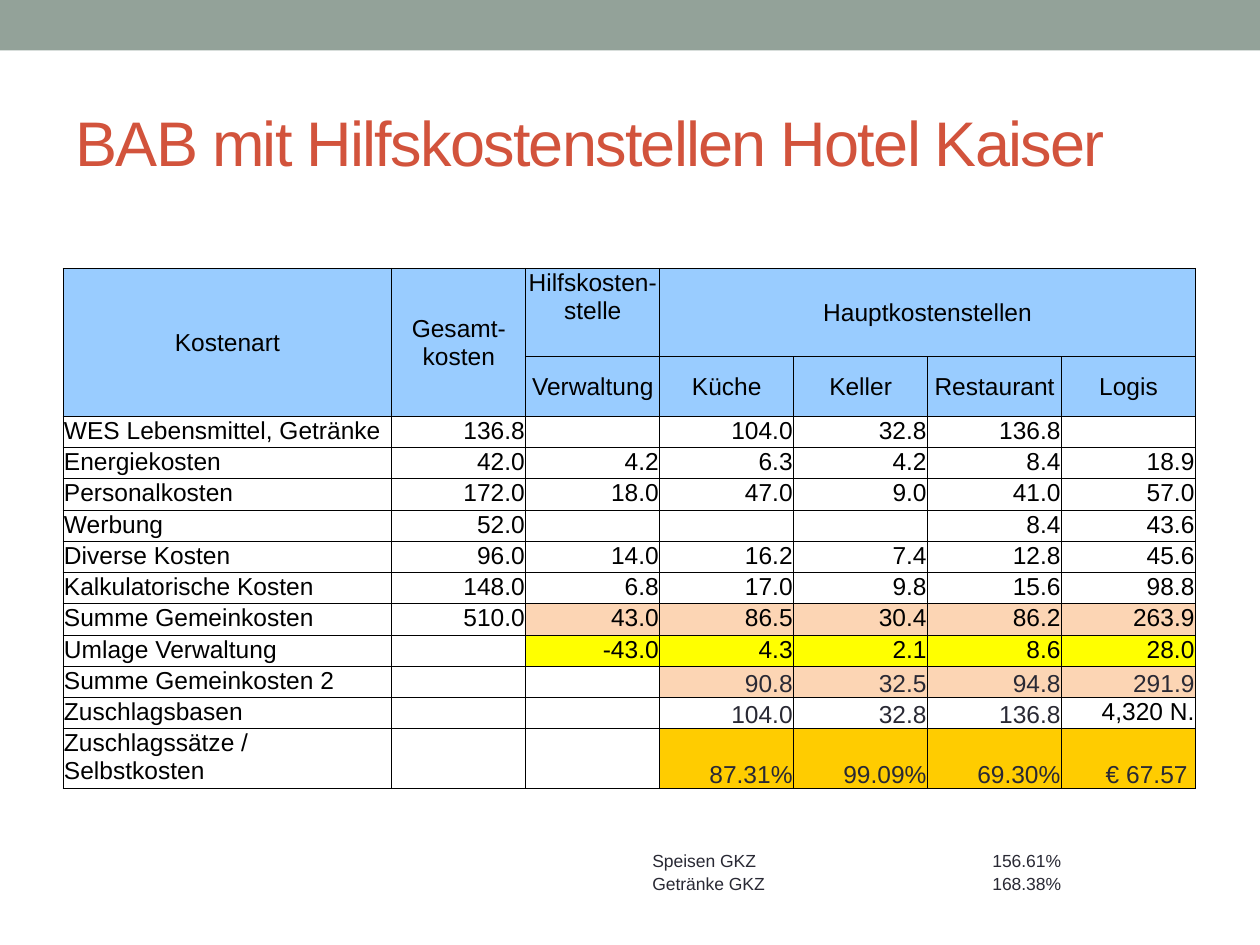
from lxml.etree import SubElement
from pptx import Presentation
from pptx.dml.color import RGBColor
from pptx.enum.shapes import MSO_SHAPE
from pptx.enum.text import MSO_ANCHOR as ANCHOR, PP_ALIGN as ALIGN
from pptx.oxml.ns import qn
from pptx.util import Cm, Pt

SAGE = RGBColor(0x93, 0xA2, 0x99)
RUST = RGBColor(0xD2, 0x53, 0x3C)
BLACK = RGBColor(0, 0, 0)
SLATE = RGBColor(0x29, 0x29, 0x34)
BLUE = RGBColor(0x99, 0xCC, 0xFF)
PEACH = RGBColor(0xFC, 0xD5, 0xB4)
YELLOW = RGBColor(0xFF, 0xFF, 0x00)
GOLD = RGBColor(0xFF, 0xCC, 0x00)
PLAIN_TABLE = "{2D5ABB26-0587-4C30-8999-92F81FD0307C}"

HEADER = [
    ["Kostenart", "Gesamt-kosten", "Hilfskosten-stelle", "Hauptkostenstellen", "", "", ""],
    ["", "", "Verwaltung", "Küche", "Keller", "Restaurant", "Logis"],
]
COSTS = [
    ["WES Lebensmittel, Getränke", "136.8", "", "104.0", "32.8", "136.8", ""],
    ["Energiekosten", "42.0", "4.2", "6.3", "4.2", "8.4", "18.9"],
    ["Personalkosten", "172.0", "18.0", "47.0", "9.0", "41.0", "57.0"],
    ["Werbung", "52.0", "", "", "", "8.4", "43.6"],
    ["Diverse Kosten", "96.0", "14.0", "16.2", "7.4", "12.8", "45.6"],
    ["Kalkulatorische Kosten", "148.0", "6.8", "17.0", "9.8", "15.6", "98.8"],
    ["Summe Gemeinkosten", "510.0", "43.0", "86.5", "30.4", "86.2", "263.9"],
    ["Umlage Verwaltung", "", "-43.0", "4.3", "2.1", "8.6", "28.0"],
    ["Summe Gemeinkosten 2", "", "", "90.8", "32.5", "94.8", "291.9"],
    ["Zuschlagsbasen", "", "", "104.0", "32.8", "136.8", "4,320 N."],
    ["Zuschlagssätze / Selbstkosten", "", "", "87.31%", "99.09%", "69.30%", " € 67.57 "],
]
SURCHARGES = [["Speisen GKZ", "", "156.61%"], ["Getränke GKZ", "", "168.38%"]]

# Row number: (first highlighted column, colour)
HIGHLIGHTS = {8: (2, PEACH), 9: (2, YELLOW), 10: (3, PEACH), 12: (3, GOLD)}


class SlideBuilder:
    font = "Arial"

    def __init__(self, slide):
        self.slide = slide

    def style(self, paragraph, size, color, align):
        paragraph.alignment = align
        for run in paragraph.runs:
            run.font.name = self.font
            run.font.size = Pt(size)
            run.font.color.rgb = color
        if not paragraph.runs:
            # Keeps empty cells from stretching their row
            paragraph._p.get_or_add_endParaRPr().set("sz", str(size * 100))

    def title(self, text, left, top, width, height):
        title = self.slide.shapes.title
        title.left, title.top, title.width, title.height = map(Cm, (left, top, width, height))
        frame = title.text_frame
        frame.text = text
        frame.vertical_anchor = ANCHOR.MIDDLE
        self.style(frame.paragraphs[0], 36, RUST, ALIGN.LEFT)
        frame.paragraphs[0].runs[0].font._element.set("spc", "-100")

    def bar(self, left, top, width, height, color):
        bar = self.slide.shapes.add_shape(MSO_SHAPE.RECTANGLE, *map(Cm, (left, top, width, height)))
        bar.shadow.inherit = False
        bar.fill.solid()
        bar.fill.fore_color.rgb = color
        bar.line.fill.background()

    def table(self, left, top, widths, heights):
        frame = self.slide.shapes.add_table(
            len(heights), len(widths), Cm(left), Cm(top), Cm(sum(widths)), Cm(sum(heights)))
        table = frame.table
        table.first_row = table.horz_banding = False
        table._tbl.tblPr.find(qn("a:tableStyleId")).text = PLAIN_TABLE
        for column, width in zip(table.columns, widths):
            column.width = Cm(width)
        for row, height in zip(table.rows, heights):
            row.height = Cm(height)
        return table

    def cell(self, cell, text, size, color, align, anchor, fill=None):
        cell.margin_left = cell.margin_right = cell.margin_top = Cm(0.02)
        cell.margin_bottom = 0
        cell.vertical_anchor = anchor
        cell.text_frame.text = text
        self.style(cell.text_frame.paragraphs[0], size, color, align)
        if fill is None:
            cell.fill.background()
        else:
            cell.fill.solid()
            cell.fill.fore_color.rgb = fill

    def borders(self, cell):
        properties = cell._tc.get_or_add_tcPr()
        for position, side in enumerate(("a:lnL", "a:lnR", "a:lnT", "a:lnB")):
            line = SubElement(properties, qn(side), w=str(Pt(0.5)))
            SubElement(SubElement(line, qn("a:solidFill")), qn("a:srgbClr"), val=str(BLACK))
            properties.insert(position, line)


def cost_table(builder):
    costs = builder.table(1.27, 5.41, [6.63] + [2.7] * 6, [1.78, 1.2] + [0.63] * 10 + [1.21])
    for r, row in enumerate(HEADER + COSTS):
        for c, text in enumerate(row):
            cell = costs.cell(r, c)
            if r < len(HEADER):
                anchor = ANCHOR.TOP if (r, c) == (0, 2) else ANCHOR.MIDDLE
                builder.cell(cell, text, 14, BLACK, ALIGN.CENTER, anchor, BLUE)
            else:
                first, shade = HIGHLIGHTS.get(r, (len(row), None))
                result = r >= 10 and c >= 3 and (r, c) != (11, 6)
                builder.cell(cell, text, 14, SLATE if result else BLACK,
                             ALIGN.RIGHT if c else ALIGN.LEFT,
                             ANCHOR.BOTTOM if result else ANCHOR.TOP,
                             shade if c >= first else None)
            builder.borders(cell)
    # Header spans
    for c in (0, 1):
        costs.cell(0, c).merge(costs.cell(1, c))
    costs.cell(0, 3).merge(costs.cell(0, 6))


def surcharge_table(builder):
    surcharges = builder.table(13.13, 17.12, [2.84, 2.72, 2.72], [0.43, 0.43])
    for r, row in enumerate(SURCHARGES):
        for c, text in enumerate(row):
            builder.cell(surcharges.cell(r, c), text, 10, SLATE,
                         ALIGN.RIGHT if c else ALIGN.LEFT, ANCHOR.BOTTOM)


def main():
    deck = Presentation()
    deck.slide_width, deck.slide_height = Cm(25.4), Cm(19.05)
    builder = SlideBuilder(deck.slides.add_slide(deck.slide_layouts[5]))

    # Top band and title
    builder.bar(0, 0, 25.4, 1.02, SAGE)
    builder.title("BAB mit Hilfskostenstellen Hotel Kaiser", 1.27, 1.47, 22.86, 2.74)

    # Cost sheet and surcharge rates
    cost_table(builder)
    surcharge_table(builder)
    deck.save("out.pptx")


if __name__ == "__main__":
    main()
